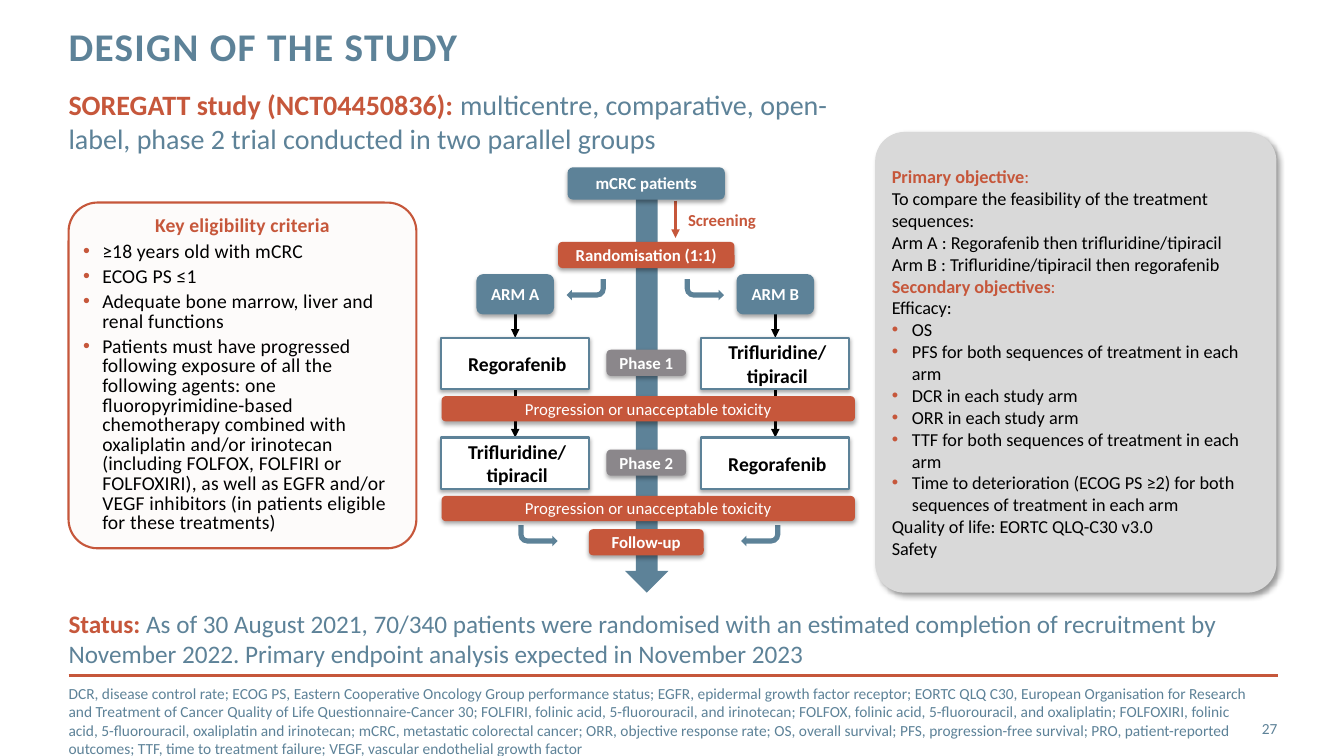
from copy import deepcopy
from dataclasses import dataclass
from typing import NamedTuple

from lxml import etree
from pptx import Presentation
from pptx.dml.color import RGBColor
from pptx.enum.shapes import MSO_CONNECTOR, MSO_SHAPE
from pptx.enum.text import MSO_ANCHOR, PP_ALIGN
from pptx.oxml.ns import qn
from pptx.util import Inches, Pt

ROUND, DOWN, BENT = MSO_SHAPE.ROUNDED_RECTANGLE, MSO_SHAPE.DOWN_ARROW, MSO_SHAPE.BENT_ARROW
STRAIGHT = MSO_CONNECTOR.STRAIGHT
LEFT, CENTER, RIGHT = PP_ALIGN.LEFT, PP_ALIGN.CENTER, PP_ALIGN.RIGHT
TOP, MIDDLE = MSO_ANCHOR.TOP, MSO_ANCHOR.MIDDLE


@dataclass(frozen=True)
class Theme:
    font: str = "Calibri"
    blue: str = "5D8298"
    rust: str = "C6573B"
    gray: str = "8B878B"
    panel: str = "D9D9D9"
    cream: str = "FDFBFA"
    black: str = "000000"
    white: str = "FFFFFF"
    title: int = 28
    subtitle: int = 20
    status: int = 18
    body: int = 14
    objective: int = 13
    label: int = 12
    note: int = 11


class Box(NamedTuple):
    left: float
    top: float
    width: float
    height: float


class Span(NamedTuple):
    text: str
    color: str | None = None
    bold: bool | None = None


class Line(NamedTuple):
    spans: list[Span]
    bullet: bool = False
    align: PP_ALIGN | None = None


class Shadow(NamedTuple):
    alpha: int
    blur: float
    distance: float
    angle: int


class Pill(NamedTuple):
    text: str
    box: Box
    fill: str
    bold: bool = True


THEME = Theme()
SOFT = Shadow(35, 3.1, 1.8, 90)
DEEP = Shadow(40, 4, 3, 45)

prs = Presentation()
prs.slide_width, prs.slide_height = Inches(13.33), Inches(7.5)
slide = prs.slides.add_slide(prs.slide_layouts[6])


def plain(text: str, bullet: bool = False) -> Line:
    return Line([Span(text)], bullet)


def write(shape, lines: list[Line], *, size: int, color: str, bold=False, align=LEFT,
          anchor=TOP, insets=(0, 0, 0, 0), leading=None, before=0, after=0,
          hanging=0.2, tracking=0.0, wrap=True) -> None:
    """Fill a shape with formatted paragraphs."""
    frame = shape.text_frame
    frame.word_wrap, frame.vertical_anchor = wrap, anchor
    (frame.margin_left, frame.margin_top,
     frame.margin_right, frame.margin_bottom) = map(Inches, insets)
    for index, line in enumerate(lines):
        para = frame.paragraphs[0] if index == 0 else frame.add_paragraph()
        if line.bullet:
            props = para._p.get_or_add_pPr()
            props.set("marL", str(Inches(0.2)))
            props.set("indent", str(-Inches(hanging)))
            tint = etree.SubElement(props, qn("a:buClr"))
            etree.SubElement(tint, qn("a:srgbClr"), val=THEME.rust)
            etree.SubElement(props, qn("a:buFont"), typeface="Arial")
            etree.SubElement(props, qn("a:buChar"), char="•")
        para.alignment = align if line.align is None else line.align
        para.space_before, para.space_after = Pt(before if index else 0), Pt(after)
        if leading:
            para.line_spacing = Pt(leading)
        for span in line.spans:
            for part, words in enumerate(span.text.split("\n")):
                if part:
                    para.add_line_break()
                run = para.add_run()
                run.text = words
                font = run.font
                font.name, font.size = THEME.font, Pt(size)
                font.bold = bold if span.bold is None else span.bold
                font.color.rgb = RGBColor.from_string(span.color or color)
                if tracking:
                    run._r.get_or_add_rPr().set("spc", str(round(tracking * 100)))
                if part:
                    # The break takes the size of the words after it
                    run._r.getprevious().insert(0, deepcopy(run._r.rPr))


def add_text(box: Box, lines: list[Line], **style) -> None:
    write(slide.shapes.add_textbox(*map(Inches, box)), lines, **style)


def add_block(kind, box: Box, fill: str, *, outline: str | None = None,
              radius: float | None = None, shadow: Shadow | None = None):
    block = slide.shapes.add_shape(kind, *map(Inches, box))
    block.shadow.inherit = False
    block.fill.solid()
    block.fill.fore_color.rgb = RGBColor.from_string(fill)
    if outline:
        block.line.color.rgb = RGBColor.from_string(outline)
        block.line.width = Pt(1.5)
    else:
        block.line.fill.background()
    if radius is not None:
        block.adjustments[0] = radius
    if shadow:
        effects = block._element.spPr.find(qn("a:effectLst"))
        outer = etree.SubElement(effects, qn("a:outerShdw"), blurRad=str(Pt(shadow.blur)),
                                 dist=str(Pt(shadow.distance)),
                                 dir=str(shadow.angle * 60000), rotWithShape="0")
        tint = etree.SubElement(outer, qn("a:srgbClr"), val=THEME.black)
        etree.SubElement(tint, qn("a:alpha"), val=str(shadow.alpha * 1000))
    return block


def add_pill(pill: Pill) -> None:
    block = add_block(ROUND, pill.box, pill.fill, shadow=SOFT)
    write(block, [plain(pill.text)], size=THEME.label, color=THEME.white, bold=pill.bold,
          align=CENTER, anchor=MIDDLE, leading=14)


def add_line(x1: float, y1: float, x2: float, y2: float, color: str, arrow=True) -> None:
    line = slide.shapes.add_connector(STRAIGHT, *map(Inches, (x1, y1, x2, y2)))
    line.line.color.rgb = RGBColor.from_string(color)
    line.line.width = Pt(2)
    if arrow:
        etree.SubElement(line.line._get_or_add_ln(), qn("a:tailEnd"), type="triangle")
    etree.SubElement(line._element.spPr, qn("a:effectLst"))


def add_turn(left: float, top: float, to_left: bool) -> None:
    turn = add_block(BENT, Box(left, top, 0.39, 0.21), THEME.blue)
    frame = turn._element.spPr.find(qn("a:xfrm"))
    frame.set("flipV", "1")
    if to_left:
        frame.set("flipH", "1")


# Heading
add_text(Box(0.68, 0.27, 9.56, 0.88), [plain("DESIGN OF THE STUDY")], size=THEME.title,
         color=THEME.blue, bold=True, leading=30, tracking=1)
add_text(Box(0.68, 0.87, 7.67, 0.39), [Line([
    Span("SOREGATT study (NCT04450836): ", THEME.rust, True),
    Span("multicentre, comparative, open-label, phase 2 trial conducted in two parallel groups"),
])], size=THEME.subtitle, color=THEME.blue)

# Objectives panel
objectives = add_block(ROUND, Box(8.68, 1.31, 3.98, 4.57), THEME.panel, radius=0.073, shadow=DEEP)
write(objectives, [
    Line([Span("Primary objective", THEME.rust, True), Span(":", THEME.rust)]),
    plain("To compare the feasibility of the treatment sequences:"),
    plain("Arm A : Regorafenib then trifluridine/tipiracil"),
    plain("Arm B : Trifluridine/tipiracil then regorafenib"),
    Line([Span("Secondary objectives", THEME.rust, True), Span(":", THEME.rust)]),
    plain("Efficacy:"),
    *(plain(endpoint, bullet=True) for endpoint in (
        "OS",
        "PFS for both sequences of treatment in each arm",
        "DCR in each study arm",
        "ORR in each study arm",
        "TTF for both sequences of treatment in each arm",
        "Time to deterioration (ECOG PS ≥2) for both sequences of treatment in each arm",
    )),
    plain("Quality of life: EORTC QLQ-C30 v3.0"),
    plain("Safety"),
], size=THEME.objective, color=THEME.black, anchor=MIDDLE, insets=(0.08, 0.05, 0.04, 0.05))

# Eligibility panel
eligibility = add_block(ROUND, Box(0.68, 2.01, 3.45, 3.43), THEME.cream,
                        outline=THEME.rust, radius=0.084)
write(eligibility, [
    Line([Span("Key eligibility criteria", THEME.rust, True)], align=CENTER),
    *(plain(criterion, bullet=True) for criterion in (
        "≥18 years old with mCRC",
        "ECOG PS ≤1",
        "Adequate bone marrow, liver and renal functions",
        "Patients must have progressed following exposure of all the following agents: one "
        "fluoropyrimidine-based chemotherapy combined with oxaliplatin and/or irinotecan "
        "(including FOLFOX, FOLFIRI or FOLFOXIRI), as well as EGFR and/or VEGF inhibitors "
        "(in patients eligible for these treatments)",
    )),
], size=THEME.body, color=THEME.black, anchor=MIDDLE, insets=(0.05,) * 4, leading=14,
    after=4, hanging=0.19, tracking=0.1)

# Flow: spine, screening and its labels
SPINE, ARM_CENTERS, PHASE_TOP, PHASE_PITCH = 6.41, (5.11, 7.69), 3.35, 0.99
add_block(DOWN, Box(6.2, 1.92, 0.43, 3.96), THEME.blue)
add_text(Box(6.72, 2.03, 0.88, 0.3), [plain("Screening")], size=THEME.label, color=THEME.rust,
         bold=True, align=CENTER, insets=(0.1, 0.05, 0.1, 0.05), wrap=False)
add_line(6.7, 1.99, 6.7, 2.36, THEME.rust)
for stage, top, width, height, fill in (
    ("mCRC patients", 1.66, 1.56, 0.32, THEME.blue),
    ("Randomisation (1:1)", 2.4, 1.75, 0.26, THEME.rust),
    ("Follow-up", 5.25, 1.14, 0.26, THEME.rust),
):
    add_pill(Pill(stage, Box(SPINE - width / 2, top, width, height), fill))

# Flow: arms, with their arrows behind
for arm, center in zip("AB", ARM_CENTERS):
    add_line(center, 2.95, center, 3.35, THEME.black)
    add_line(center, 3.87, center, 4.34, THEME.black)
    add_pill(Pill(f"ARM {arm}", Box(center - 0.385, 2.72, 0.77, 0.4), THEME.blue))
for left, top, to_left in ((5.62, 2.77, True), (6.79, 2.77, False),
                           (5.14, 5.21, False), (7.35, 5.21, True)):
    add_turn(left, top, to_left)

# Flow: the two phases, with treatments swapped between arms
TREATMENTS = ("Regorafenib", "Trifluridine/\ntipiracil")
for phase, treatments in enumerate((TREATMENTS, TREATMENTS[::-1])):
    top = PHASE_TOP + phase * PHASE_PITCH
    for center, treatment in zip(ARM_CENTERS, treatments):
        card = add_block(ROUND, Box(center - 0.735, top, 1.47, 0.51), THEME.white,
                         outline=THEME.blue, radius=0, shadow=SOFT)
        write(card, [plain(treatment)], size=THEME.body, color=THEME.black, bold=True,
              align=CENTER, anchor=MIDDLE, insets=(0.04, 0, 0, 0), after=9)
    add_pill(Pill(f"Phase {phase + 1}", Box(SPINE - 0.395, top + 0.12, 0.79, 0.26), THEME.gray))
    add_pill(Pill("Progression or unacceptable toxicity", Box(4.38, top + 0.58, 4.1, 0.25),
                  THEME.rust, bold=False))

# Status and footer
add_text(Box(0.68, 6.03, 12.05, 0.39), [Line([
    Span("Status: ", THEME.rust, True),
    Span("As of 30 August 2021, 70/340 patients were randomised with an estimated completion of "
         "recruitment by November 2022. Primary endpoint analysis expected in November 2023"),
])], size=THEME.status, color=THEME.blue)
add_line(0.68, 6.7, 12.68, 6.7, THEME.rust, arrow=False)
add_text(Box(0.68, 6.95, 11.82, 0.4), [plain(
    "DCR, disease control rate; ECOG PS, Eastern Cooperative Oncology Group performance status; "
    "EGFR, epidermal growth factor receptor; EORTC QLQ C30, European Organisation for Research and "
    "Treatment of Cancer Quality of Life Questionnaire-Cancer 30; FOLFIRI, folinic acid, "
    "5-fluorouracil, and irinotecan; FOLFOX, folinic acid, 5-fluorouracil, and oxaliplatin; "
    "FOLFOXIRI, folinic acid, 5-fluorouracil, oxaliplatin and irinotecan; mCRC, metastatic "
    "colorectal cancer; ORR, objective response rate; OS, overall survival; PFS, progression-free "
    "survival; PRO, patient-reported outcomes; TTF, time to treatment failure; VEGF, vascular "
    "endothelial growth factor")], size=THEME.note, color=THEME.blue, anchor=MIDDLE)
add_text(Box(11.81, 7.03, 0.86, 0.4), [plain("27")], size=THEME.note, color=THEME.blue,
         align=RIGHT, anchor=MIDDLE)

prs.save("out.pptx")
